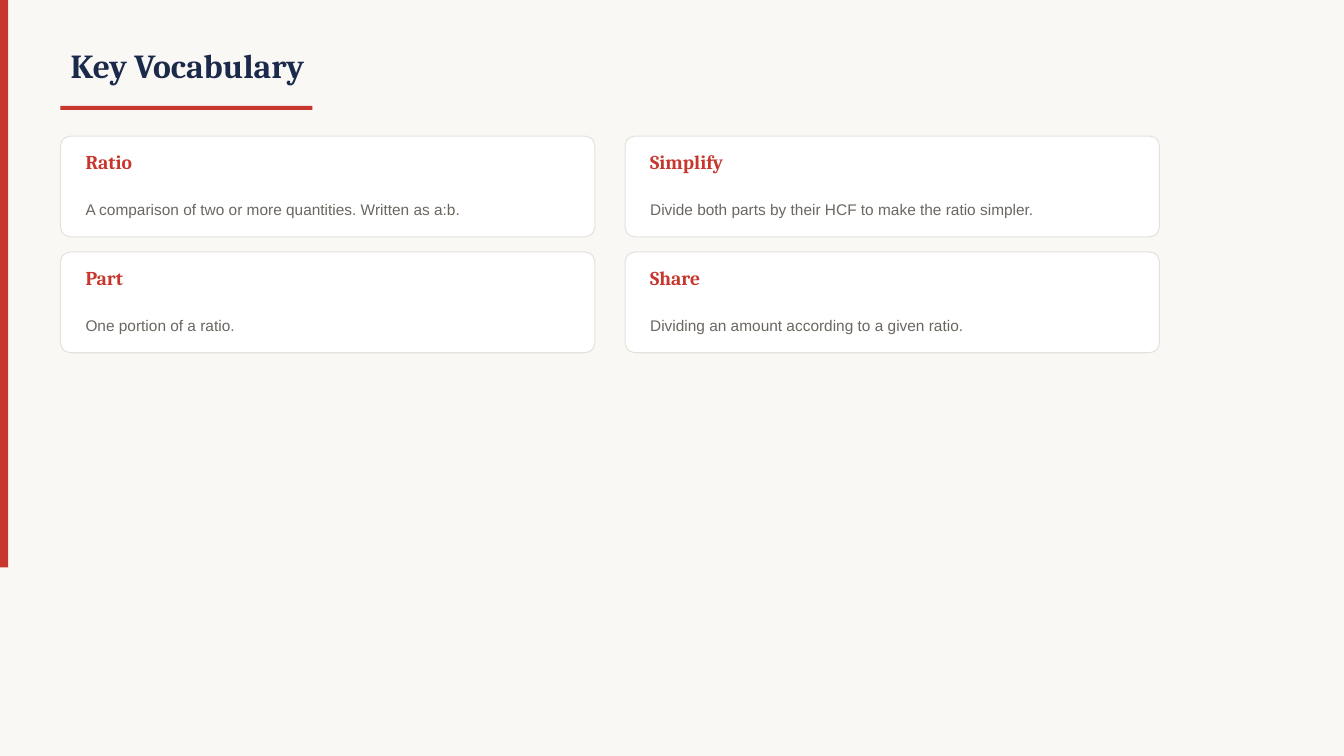
from pptx import Presentation
from pptx.dml.color import RGBColor
from pptx.enum.shapes import MSO_SHAPE
from pptx.enum.text import MSO_ANCHOR, PP_ALIGN
from pptx.util import Pt

RECT = MSO_SHAPE.RECTANGLE
ROUND = MSO_SHAPE.ROUNDED_RECTANGLE
MIDDLE = MSO_ANCHOR.MIDDLE
LEFT = PP_ALIGN.LEFT
PX = 9144  # 100 px to the inch
COLORS = {
    "paper": "FAF8F5",
    "red": "C8372D",
    "navy": "1B2A4A",
    "gray": "6B6660",
    "card": "FFFFFF",
    "edge": "E5E2DC",
}
TERMS = [
    ("Ratio", "A comparison of two or more quantities. Written as a:b."),
    ("Simplify", "Divide both parts by their HCF to make the ratio simpler."),
    ("Part", "One portion of a ratio."),
    ("Share", "Dividing an amount according to a given ratio."),
]

deck = Presentation()
deck.slide_width, deck.slide_height = 1333 * PX, 750 * PX
slide = deck.slides.add_slide(deck.slide_layouts[5])
slide.background.fill.solid()
slide.background.fill.fore_color.rgb = RGBColor.from_string(COLORS["paper"])


def add_box(kind, x, y, w, h, fill, edge=None):
    box = slide.shapes.add_shape(kind, x * PX, y * PX, w * PX, h * PX)
    box.shadow.inherit = False
    box.fill.solid()
    box.fill.fore_color.rgb = RGBColor.from_string(COLORS[fill])
    if edge:
        box.line.color.rgb = RGBColor.from_string(COLORS[edge])
        box.line.width = Pt(0.75)
    else:
        box.line.fill.background()
    return box


def put_text(text, x, y, w, h, size, color, font="Cambria", bold=True,
             space=1.0, shape=None):
    """Fill the given shape, or a new text box, with one line of text."""
    shape = shape or slide.shapes.add_textbox(0, 0, 0, 0)
    shape.left, shape.top = x * PX, y * PX
    shape.width, shape.height = w * PX, h * PX
    frame = shape.text_frame
    frame.text = text
    frame.word_wrap = True
    frame.vertical_anchor = MIDDLE
    para = frame.paragraphs[0]
    para.alignment = LEFT
    para.line_spacing = space
    para.font.name = font
    para.font.size = Pt(size)
    para.font.bold = bold
    para.font.color.rgb = RGBColor.from_string(COLORS[color])


add_box(RECT, 0, 0, 8, 563, "red")
put_text("Key Vocabulary", 60, 30, 1000, 70, 24, "navy",
         shape=slide.shapes.title)
add_box(RECT, 60, 105, 250, 4, "red")

for i, (term, meaning) in enumerate(TERMS):
    row, col = divmod(i, 2)
    x, y = 60 + col * 560, 135 + row * 115
    card = add_box(ROUND, x, y, 530, 100, "card", "edge")
    card.adjustments[0] = 0.1
    put_text(term, x + 15, y + 8, 500, 35, 14, "red")
    put_text(meaning, x + 15, y + 45, 500, 50, 11, "gray",
             font="Arial", bold=False, space=1.3)

deck.save("out.pptx")
